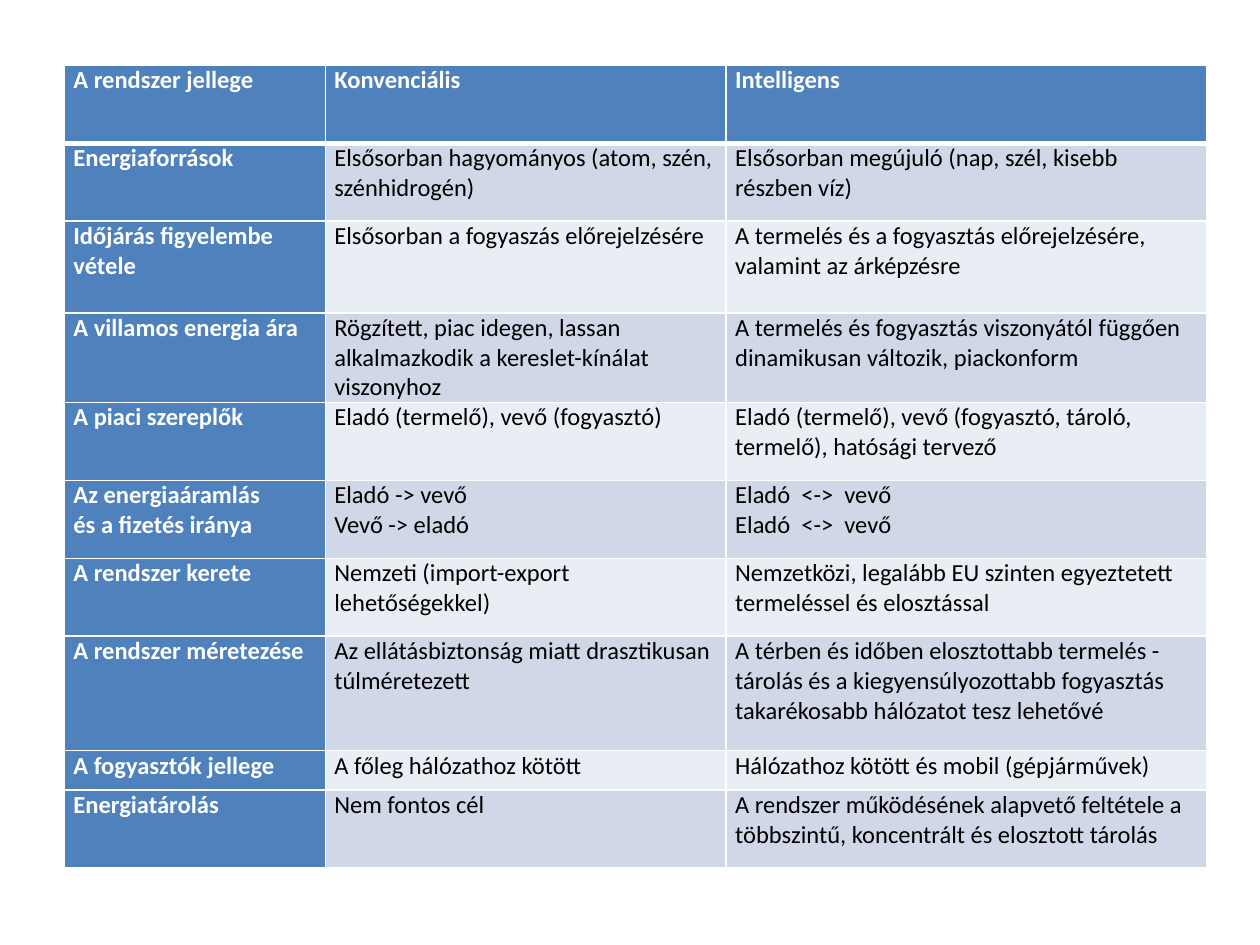
"""Build a slide with a table comparing conventional and intelligent energy systems."""
from dataclasses import dataclass

from lxml import etree
from pptx import Presentation
from pptx import util as u
from pptx.dml.color import RGBColor
from pptx.enum import text
from pptx.oxml.ns import qn

HEADER = ("A rendszer jellege", "Konvenciális", "Intelligens")
ROWS = [
    (1.57, "Energiaforrások",
     "Elsősorban hagyományos (atom, szén, szénhidrogén)",
     "Elsősorban megújuló (nap, szél, kisebb részben víz)"),
    (1.85, "Időjárás figyelembe vétele",
     "Elsősorban a fogyaszás előrejelzésére",
     "A termelés és a fogyasztás előrejelzésére, valamint az árképzésre"),
    (1.57, "A villamos energia ára",
     "Rögzített, piac idegen, lassan alkalmazkodik a kereslet-kínálat viszonyhoz",
     "A termelés és fogyasztás viszonyától függően dinamikusan változik, piackonform"),
    (1.57, "A piaci szereplők",
     "Eladó (termelő), vevő (fogyasztó)",
     "Eladó (termelő), vevő (fogyasztó, tároló, termelő), hatósági tervező"),
    (1.57, "Az energiaáramlás\nés a fizetés iránya",
     "Eladó -> vevő\nVevő -> eladó",
     "Eladó  <->  vevő\nEladó  <->  vevő"),
    (1.57, "A rendszer kerete",
     "Nemzeti (import-export lehetőségekkel)",
     "Nemzetközi, legalább EU szinten egyeztetett termeléssel és elosztással"),
    (2.31, "A rendszer méretezése",
     "Az ellátásbiztonság miatt drasztikusan túlméretezett",
     "A térben és időben elosztottabb termelés - tárolás és a kiegyensúlyozottabb "
     "fogyasztás takarékosabb hálózatot tesz lehetővé"),
    (0.79, "A fogyasztók jellege",
     "A főleg hálózathoz kötött",
     "Hálózathoz kötött és mobil (gépjárművek)"),
    (1.57, "Energiatárolás",
     "Nem fontos cél",
     "A rendszer működésének alapvető feltétele a többszintű, koncentrált és elosztott tárolás"),
]
HEADER_HEIGHT = 1.57
COLUMN_WIDTHS = (5.26, 8.08, 9.68)
LEFT, TOP = 1.3, 1.32


@dataclass(frozen=True)
class Theme:
    font: str = "Calibri"
    size: int = 14
    accent: str = "4F81BD"
    bands: tuple = ("D0D8E8", "E9EDF4")
    light: str = "FFFFFF"
    dark: str = "000000"
    thin: int = 1
    thick: int = 3
    inset: float = 0.18


THEME = Theme()


def add_border(cell, side, points):
    line = etree.SubElement(cell._tc.get_or_add_tcPr(), qn(f"a:ln{side}"), w=str(u.Pt(points)))
    fill = etree.SubElement(line, qn("a:solidFill"))
    etree.SubElement(fill, qn("a:srgbClr"), val=THEME.light)


def format_cell(cell, content, row, column):
    heading = row == 0 or column == 0
    for side in "LRTB":
        under_header = (row, side) in ((0, "B"), (1, "T"))
        add_border(cell, side, THEME.thick if under_header else THEME.thin)
    cell.fill.solid()
    background = THEME.accent if heading else THEME.bands[(row - 1) % 2]
    cell.fill.fore_color.rgb = RGBColor.from_string(background)
    cell.margin_left = cell.margin_right = u.Cm(THEME.inset)
    cell.margin_top = cell.margin_bottom = 0
    cell.vertical_anchor = text.MSO_ANCHOR.TOP
    cell.text = content
    for paragraph in cell.text_frame.paragraphs:
        font = paragraph.font
        font.name, font.size, font.bold = THEME.font, u.Pt(THEME.size), heading
        font.color.rgb = RGBColor.from_string(THEME.light if heading else THEME.dark)


def add_comparison(slide):
    rows = [(HEADER_HEIGHT, *HEADER), *ROWS]
    width, height = sum(COLUMN_WIDTHS), sum(row[0] for row in rows)
    table = slide.shapes.add_table(
        len(rows), len(COLUMN_WIDTHS), u.Cm(LEFT), u.Cm(TOP), u.Cm(width), u.Cm(height)
    ).table
    table.first_col = True
    for column, column_width in zip(table.columns, COLUMN_WIDTHS):
        column.width = u.Cm(column_width)
    for row, (row_height, *contents) in enumerate(rows):
        table.rows[row].height = u.Cm(row_height)
        for column, content in enumerate(contents):
            format_cell(table.cell(row, column), content, row, column)


def main():
    presentation = Presentation()
    presentation.slide_width, presentation.slide_height = u.Cm(25.4), u.Cm(19.05)
    slide = presentation.slides.add_slide(presentation.slide_layouts.get_by_name("Blank"))
    add_comparison(slide)
    presentation.save("out.pptx")


if __name__ == "__main__":
    main()
